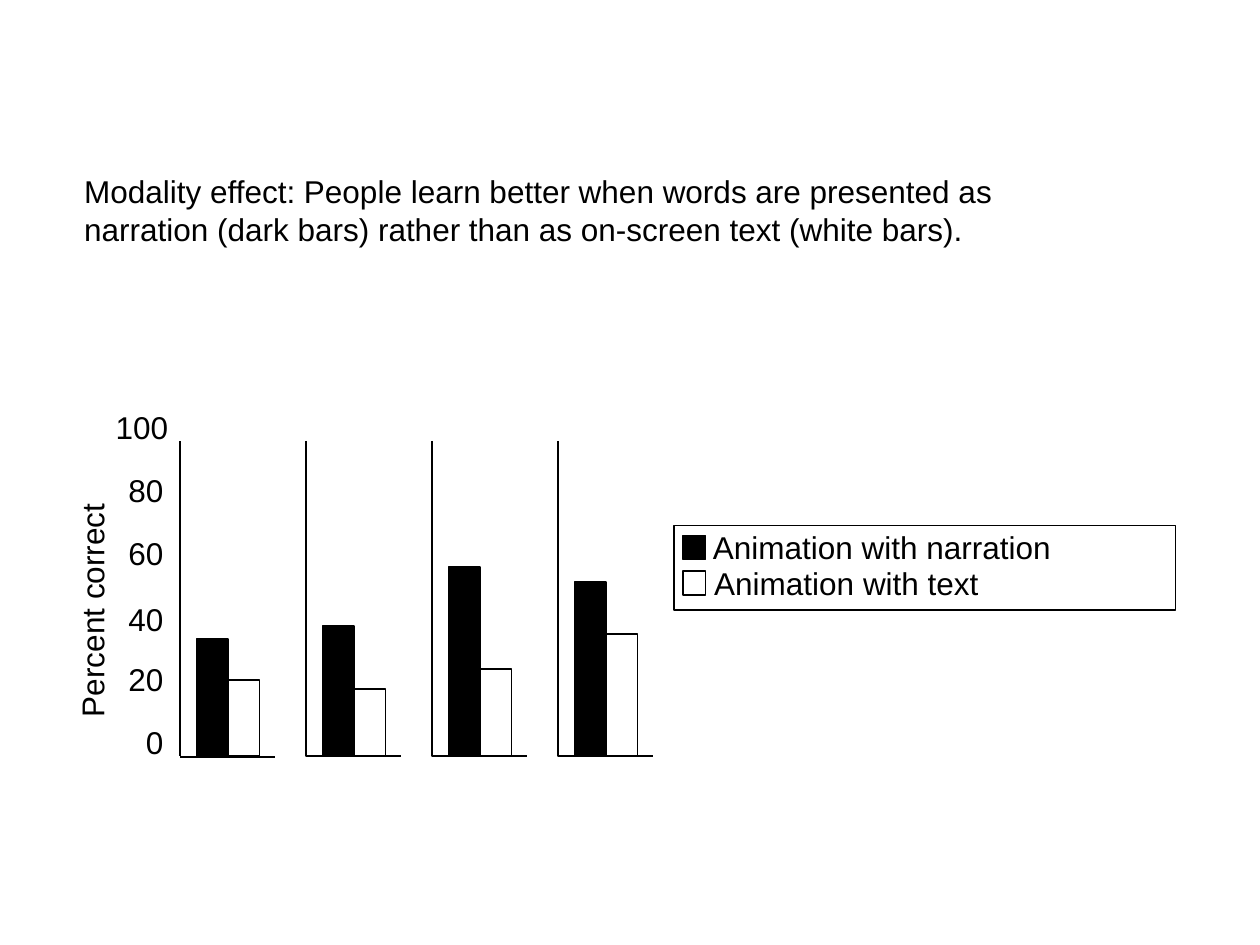
from pptx import Presentation
from pptx.dml.color import RGBColor
from pptx.enum.shapes import MSO_CONNECTOR, MSO_SHAPE
from pptx.enum.text import MSO_ANCHOR
from pptx.oxml.ns import qn
from pptx.util import Pt
from lxml import etree

RECT = MSO_SHAPE.RECTANGLE
LINE = MSO_CONNECTOR.STRAIGHT
TOP = MSO_ANCHOR.TOP
PX = 9144  # 100 px to the inch

THEME = {
    "dark": RGBColor(0, 0, 0),
    "light": RGBColor(255, 255, 255),
    "rule": Pt(1),
    "type": {"name": "Arial", "size": Pt(18)},
}

deck = Presentation()
deck.slide_width, deck.slide_height = 1000 * PX, 750 * PX
slide = deck.slides.add_slide(deck.slide_layouts[6])
shapes = slide.shapes


def add_text(x, y, w, h, *lines):
    box = shapes.add_textbox(x * PX, y * PX, w * PX, h * PX)
    frame = box.text_frame
    frame.text = "\n".join(lines)
    for key, val in {"word_wrap": True, "vertical_anchor": TOP}.items():
        setattr(frame, key, val)
    for para in frame.paragraphs:
        for key, val in THEME["type"].items():
            setattr(para.font, key, val)
        para.font.color.rgb = THEME["dark"]
    return box


def add_rect(x, y, w, h, tone):
    rect = shapes.add_shape(RECT, x * PX, y * PX, w * PX, h * PX)
    rect.shadow.inherit = False
    rect.fill.solid()
    rect.fill.fore_color.rgb = THEME[tone]
    rect.line.color.rgb = THEME["dark"]
    rect.line.width = THEME["rule"]


# Heading
add_text(57, 132, 884, 90,
         "Modality effect: People learn better when words are presented as",
         "narration (dark bars) rather than as on-screen text (white bars).")

# Axes of the first panel
left, top, base, wide, step = 143, 350, 600, 75, 100
for x1, y1, x2, y2 in [(left, top, left, base),
                       (left, base + 1, left + wide, base + 1)]:
    axis = shapes.add_connector(LINE, x1 * PX, y1 * PX, x2 * PX, y2 * PX)
    axis.line.color.rgb = THEME["dark"]
    axis.line.width = THEME["rule"]
    etree.SubElement(axis._element.spPr, qn("a:effectLst"))

# Axes of the other panels
for num in range(1, 4):
    x = left + num * step
    path = shapes.build_freeform(x, top, scale=PX)
    path.add_line_segments([(x, base), (x + wide, base)], close=False)
    axis = path.convert_to_shape()
    axis.shadow.inherit = False
    axis.fill.background()
    axis.line.color.rgb = THEME["dark"]
    axis.line.width = THEME["rule"]

# Bars: heights for narration and text in each panel
bar = 25
for num, (voice, words) in enumerate([(93, 60), (103, 53), (150, 69), (138, 97)]):
    x = left + num * step + 13
    add_rect(x + bar, base - words, bar, words, "light")
    add_rect(x, base - voice, bar, voice, "dark")

# Scale
for x, y, w, tick in [(82, 319, 70, "100"), (92, 369, 53, "80"),
                      (92, 419, 53, "60"), (92, 471, 53, "40"),
                      (92, 519, 53, "20"), (106, 569, 36, "0")]:
    add_text(x, y, w, 50, tick)
add_text(-35, 441, 226, 50, "Percent correct").rotation = 270

# Legend
add_rect(535, 417, 398, 67, "light")
for x, y, w, label, key, tone in [
        (556, 414, 358, "Animation with narration", 425, "dark"),
        (557, 443, 288, "Animation with text", 453, "light")]:
    add_text(x, y, w, 50, label)
    add_rect(542, key, 18, 19, tone)

deck.save("out.pptx")
